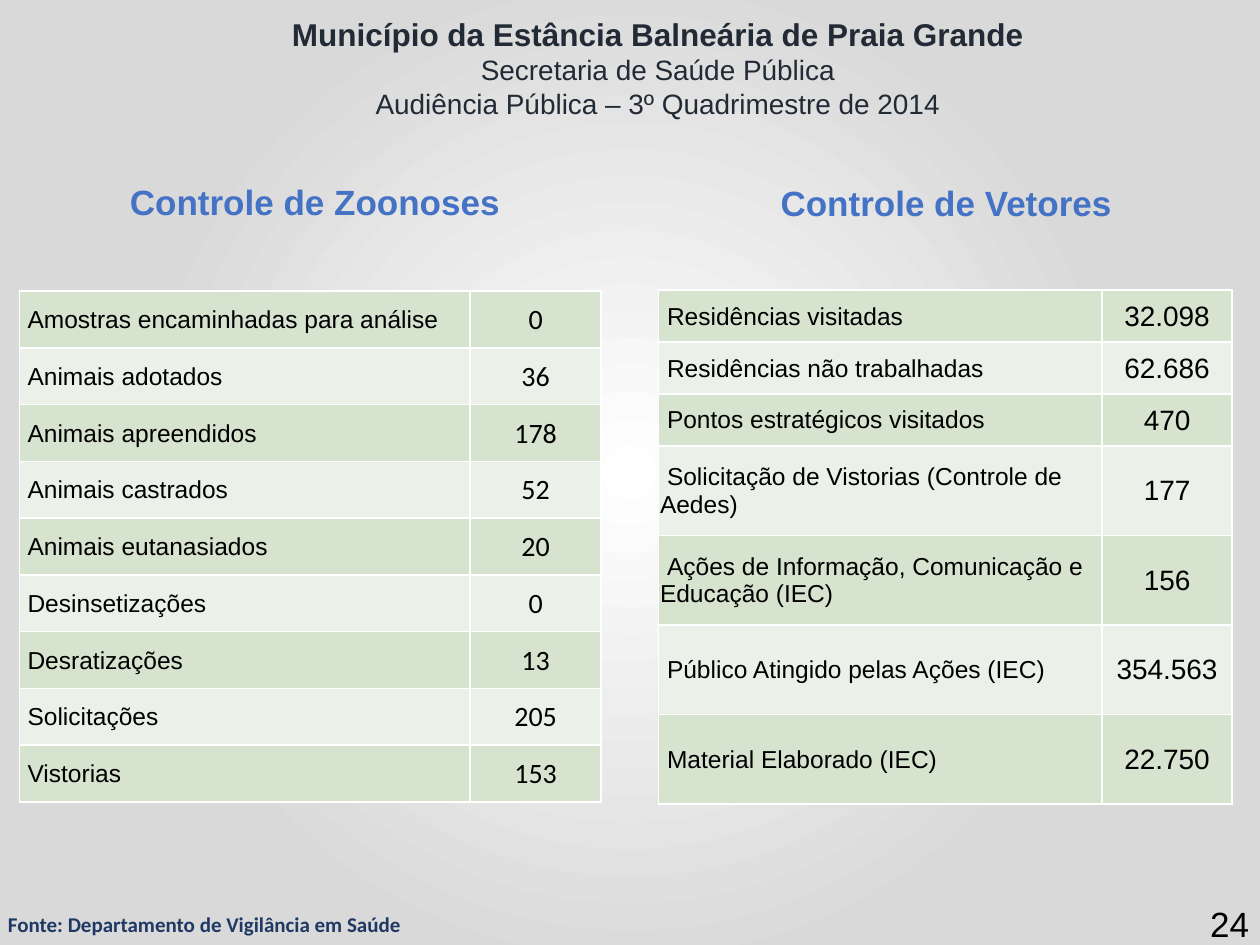
from pptx import Presentation
from pptx.dml.color import RGBColor
from pptx.enum.text import MSO_ANCHOR as Anchor, PP_ALIGN as Align
from pptx.oxml import parse_xml
from pptx.oxml.ns import nsdecls
from pptx.util import Pt

WHITE = RGBColor(0xFF, 0xFF, 0xFF)
GREY = RGBColor(0xD9, 0xD9, 0xD9)
BLACK = RGBColor(0, 0, 0)
SLATE = RGBColor(0x22, 0x2A, 0x35)
NAVY = RGBColor(0x20, 0x38, 0x64)
BLUE = RGBColor(0x44, 0x72, 0xC4)
BANDS = RGBColor(0xD5, 0xE3, 0xCF), RGBColor(0xEB, 0xF1, 0xE9)

ZOONOSES = [
    ("Amostras encaminhadas para análise", "0"),
    ("Animais adotados", "36"),
    ("Animais apreendidos", "178"),
    ("Animais castrados", "52"),
    ("Animais eutanasiados", "20"),
    ("Desinsetizações", "0"),
    ("Desratizações", "13"),
    ("Solicitações", "205"),
    ("Vistorias", "153"),
]
VETORES = [
    ("Residências visitadas", "32.098"),
    ("Residências não trabalhadas", "62.686"),
    ("Pontos estratégicos visitados", "470"),
    ("Solicitação de Vistorias (Controle de Aedes)", "177"),
    ("Ações de Informação, Comunicação e Educação (IEC)", "156"),
    ("Público Atingido pelas Ações (IEC)", "354.563"),
    ("Material Elaborado (IEC)", "22.750"),
]


def write(para, text, size=14, font="Arial", color=BLACK, bold=False,
          align=Align.LEFT, indent=0):
    """Write one formatted run into a paragraph."""
    para.alignment = align
    if indent:
        para._p.get_or_add_pPr().set("indent", str(Pt(indent)))
    span = para.add_run()
    span.text = text
    span.font.size = Pt(size)
    span.font.name = font
    span.font.bold = bold
    span.font.color.rgb = color


def add_text(page, box, lines, anchor=Anchor.TOP):
    """Place a text box; each line is (text, format)."""
    frame = page.shapes.add_textbox(*map(Pt, box)).text_frame
    frame.word_wrap = True
    frame.vertical_anchor = anchor
    for number, (text, style) in enumerate(lines):
        para = frame.add_paragraph() if number else frame.paragraphs[0]
        write(para, text, **style)


def paint_background(page):
    page.background.fill.solid()
    holder = page.background._cSld.bg.bgPr
    stops = "".join(
        f'<a:gs pos="{position * 1000}"><a:srgbClr val="{color}"/></a:gs>'
        for position, color in ((0, WHITE), (65, GREY), (97, GREY)))
    gradient = parse_xml(
        f'<a:gradFill {nsdecls("a")} rotWithShape="1"><a:gsLst>{stops}</a:gsLst>'
        '<a:path path="circle"><a:fillToRect l="50000" t="50000" r="50000" b="50000"/>'
        '</a:path></a:gradFill>')
    holder.replace(holder[0], gradient)


def format_cell(cell, fill):
    cell.margin_left = cell.margin_right = cell.margin_top = Pt(0.75)
    cell.margin_bottom = 0
    cell.vertical_anchor = Anchor.MIDDLE
    cell.fill.solid()
    cell.fill.fore_color.rgb = fill
    # Borders must come before the fill
    for index, side in enumerate("LRTB"):
        cell._tc.tcPr.insert(index, parse_xml(
            f'<a:ln{side} {nsdecls("a")} w="{Pt(1)}"><a:solidFill>'
            f'<a:srgbClr val="{WHITE}"/></a:solidFill></a:ln{side}>'))


def add_figures(page, box, rows, heights, value_width, value_font):
    """Place a two-column table of labels and values."""
    left, top, width, height = box
    table = page.shapes.add_table(len(rows), 2, *map(Pt, box)).table
    table.first_row = table.horz_banding = False
    table.columns[0].width = Pt(width - value_width)
    table.columns[1].width = Pt(value_width)
    for number, (label, value) in enumerate(rows):
        table.rows[number].height = Pt(heights[number])
        label_cell, value_cell = table.rows[number].cells
        for cell in (label_cell, value_cell):
            format_cell(cell, BANDS[number % 2])
        write(label_cell.text_frame.paragraphs[0], label, indent=4)
        write(value_cell.text_frame.paragraphs[0], value, size=16,
              font=value_font, align=Align.CENTER)


def add_header(page, box):
    plain = dict(size=16, color=SLATE, align=Align.CENTER)
    add_text(page, box, [
        ("Município da Estância Balneária de Praia Grande",
         {**plain, "size": 18, "bold": True}),
        ("Secretaria de Saúde Pública", plain),
        ("Audiência Pública – 3º Quadrimestre de 2014", plain),
    ])


def add_footer(page, source_box, number_box):
    add_text(page, source_box, [("Fonte: Departamento de Vigilância em Saúde",
             dict(size=12, font="Calibri", color=NAVY, bold=True))])
    add_text(page, number_box, [("24", dict(size=20, align=Align.RIGHT))],
             anchor=Anchor.MIDDLE)


def main():
    deck = Presentation()
    deck.slide_width, deck.slide_height = Pt(720), Pt(540)
    page = deck.slides.add_slide(deck.slide_layouts[6])
    paint_background(page)
    add_header(page, (81.4, 5, 589, 67.7))

    # Section headings
    heading = dict(size=20, color=BLUE, bold=True, align=Align.CENTER)
    add_text(page, (0, 99.4, 360, 31.5), [("Controle de Zoonoses", heading)])
    add_text(page, (360.7, 100, 360, 31.5), [("Controle de Vetores", heading)])

    # Tables
    add_figures(page, (11, 166.3, 332.6, 292), ZOONOSES, [32.45] * 9, 75, "Calibri")
    add_figures(page, (376.4, 165.7, 327.6, 293.7), VETORES,
                [29.7] * 3 + [51.15] * 4, 74.2, "Arial")

    add_footer(page, (-2.5, 517.5, 640, 21.8), (553, 513.4, 167.8, 28.8))
    deck.save("out.pptx")


if __name__ == "__main__":
    main()
